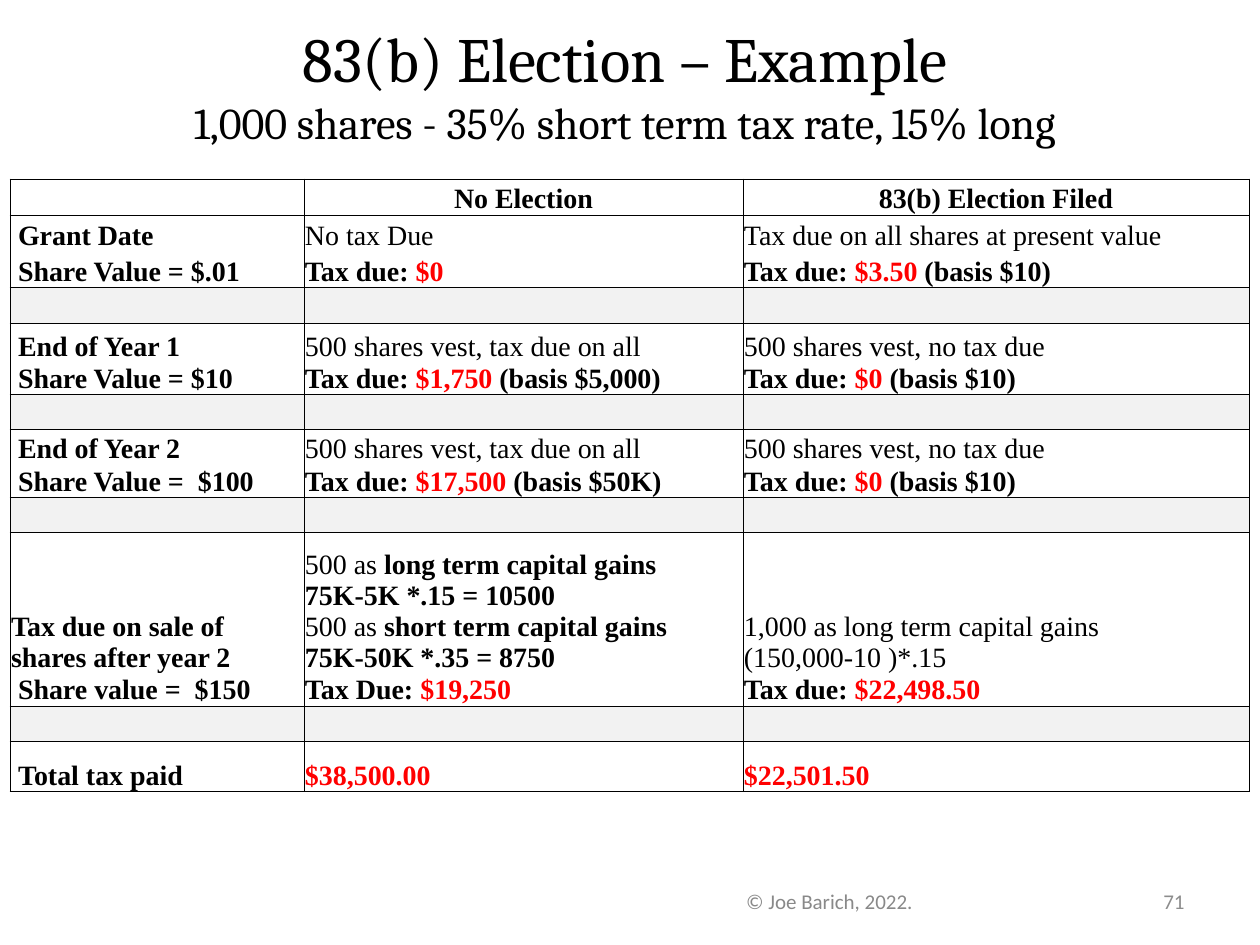
from lxml.etree import SubElement
from pptx import Presentation
from pptx.dml.color import RGBColor
from pptx.enum.text import MSO_ANCHOR, MSO_AUTO_SIZE, PP_ALIGN
from pptx.oxml.ns import qn
from pptx.util import Pt

PX = 914400 // 126
BLACK, RED, GREY, BAND = "000000", "FF0000", "8C8C8C", "F2F2F2"
PLAIN, BOLD, AMOUNT = (False, BLACK), (True, BLACK), (True, RED)


def plain(text):
    return [(text, PLAIN)]


def bold(text):
    return [(text, BOLD)]


def amount(text):
    return [(text, AMOUNT)]


def tax_due(value, basis="", label="Tax due: "):
    spans = bold(label) + amount(value)
    return spans + bold(f" (basis {basis})") if basis else spans


TITLE = "83(b) Election – Example"
SUBTITLE = "1,000 shares - 35% short term tax rate, 15% long"
# text, box, alignment, colour
FOOTERS = [
    ("© Joe Barich, 2022.", (630, 876, 399, 50), PP_ALIGN.CENTER, "898989"),
    ("71", (1050, 876, 147, 50), PP_ALIGN.RIGHT, GREY),
]
TABLE_LEFT, TABLE_TOP = 10, 179
COLUMNS = [294, 439, 506]
SPACER = (32, [[], [], []])
# row height, then the lines of each cell
ROWS = [
    (36, [[], [bold("No Election")], [bold("83(b) Election Filed")]]),
    (37, [[bold("Grant Date")], [plain("No tax Due")],
          [plain("Tax due on all shares at present value")]]),
    (36, [[bold("Share Value = $.01")], [tax_due("$0")], [tax_due("$3.50", "$10")]]),
    SPACER,
    (39, [[bold("End of Year 1")], [plain("500 shares vest, tax due on all")],
          [plain("500 shares vest, no tax due")]]),
    (32, [[bold("Share Value = $10")], [tax_due("$1,750", "$5,000")],
          [tax_due("$0", "$10")]]),
    SPACER,
    (35, [[bold("End of Year 2")], [plain("500 shares vest, tax due on all")],
          [plain("500 shares vest, no tax due")]]),
    (33, [[bold("Share Value =  $100")], [tax_due("$17,500", "$50K")],
          [tax_due("$0", "$10")]]),
    SPACER,
    (141, [[bold("Tax due on sale of shares after year 2")],
           [plain("500 as ") + bold("long term capital gains"),
            bold("75K-5K *.15 = 10500"),
            plain("500 as ") + bold("short term capital gains"),
            bold("75K-50K *.35 = 8750")],
           [plain("1,000 as long term capital gains"), plain("(150,000-10 )*.15")]]),
    (32, [[bold("Share value =  $150")], [tax_due("$19,250", label="Tax Due: ")],
          [tax_due("$22,498.50")]]),
    SPACER,
    (50, [[bold("Total tax paid")], [amount("$38,500.00")], [amount("$22,501.50")]]),
]
OPEN_BELOW = {1, 4, 7, 10}  # rows that run into the next one without a line
THICK_BELOW = 8
FLUSH_LABEL = 10  # the only row label without an indent


def color(value):
    return RGBColor.from_string(value)


def style(font, name, size, shade, is_bold=False):
    font.name, font.size, font.bold = name, Pt(size), is_bold
    font.color.rgb = color(shade)


def place(shape, box):
    shape.left, shape.top, shape.width, shape.height = [v * PX for v in box]


def add_border(cell, side, width):
    """Draw one cell side; a width of 0 hides it."""
    line = SubElement(cell._tc.get_or_add_tcPr(), qn(f"a:ln{side}"), w=str(Pt(width)))
    if width:
        SubElement(SubElement(line, qn("a:solidFill")), qn("a:srgbClr"), val=BLACK)
    else:
        SubElement(line, qn("a:noFill"))


def line_width(row):
    """Width of the rule below a row."""
    if row in OPEN_BELOW:
        return 0
    return 1 if row == THICK_BELOW else 0.5


def fill_cell(cell, lines, row, column):
    widths = {"L": 0.5, "R": 0.5, "T": line_width(row - 1), "B": line_width(row)}
    for side, width in widths.items():
        add_border(cell, side, width)
    if ROWS[row] is SPACER:
        cell.fill.solid()
        cell.fill.fore_color.rgb = color(BAND)
    else:
        cell.fill.background()
    cell.vertical_anchor = MSO_ANCHOR.BOTTOM
    indented = column == 0 and row != FLUSH_LABEL
    cell.margin_left = (8 if indented else 1) * PX
    cell.margin_right = cell.margin_top = PX
    cell.margin_bottom = 0
    frame = cell.text_frame
    if not lines:
        SubElement(frame.paragraphs[0]._p, qn("a:endParaRPr"), sz="1600")
    for index, spans in enumerate(lines):
        para = frame.add_paragraph() if index else frame.paragraphs[0]
        para.alignment = PP_ALIGN.LEFT if row else PP_ALIGN.CENTER
        for text, (is_bold, shade) in spans:
            span = para.add_run()
            span.text = text
            style(span.font, "Times New Roman", 16, shade, is_bold)


def add_title(page):
    title = page.shapes.title
    place(title, (53, 21, 1144, 126))
    frame = title.text_frame
    frame.text = f"{TITLE}\v{SUBTITLE}"
    frame.auto_size = MSO_AUTO_SIZE.NONE
    frame.vertical_anchor = MSO_ANCHOR.MIDDLE
    para = frame.paragraphs[0]
    para.alignment = PP_ALIGN.CENTER
    for span, size in zip(para.runs, (36, 25.2)):
        style(span.font, "Cambria", size, BLACK)
    SubElement(para._p.find(qn("a:br")), qn("a:rPr"), sz="3600")


def add_tax_table(page):
    heights = [height for height, _ in ROWS]
    box = (TABLE_LEFT, TABLE_TOP, sum(COLUMNS), sum(heights))
    table = page.shapes.add_table(len(ROWS), len(COLUMNS), *[v * PX for v in box]).table
    table.first_row = table.horz_banding = False
    for column, width in zip(table.columns, COLUMNS):
        column.width = width * PX
    for row, (height, cells) in enumerate(ROWS):
        table.rows[row].height = height * PX
        for column, lines in enumerate(cells):
            fill_cell(table.cell(row, column), lines, row, column)


def add_footer(page, text, box, alignment, shade):
    frame = page.shapes.add_textbox(*[v * PX for v in box]).text_frame
    frame.word_wrap = True
    frame.vertical_anchor = MSO_ANCHOR.MIDDLE
    frame.text = text
    para = frame.paragraphs[0]
    para.alignment = alignment
    style(para.runs[0].font, "Calibri", 12, shade)


def main():
    deck = Presentation()
    deck.slide_width, deck.slide_height = 1260 * PX, 945 * PX
    page = deck.slides.add_slide(deck.slide_layouts[5])
    add_title(page)
    add_tax_table(page)
    for footer in FOOTERS:
        add_footer(page, *footer)
    deck.save("out.pptx")


if __name__ == "__main__":
    main()
